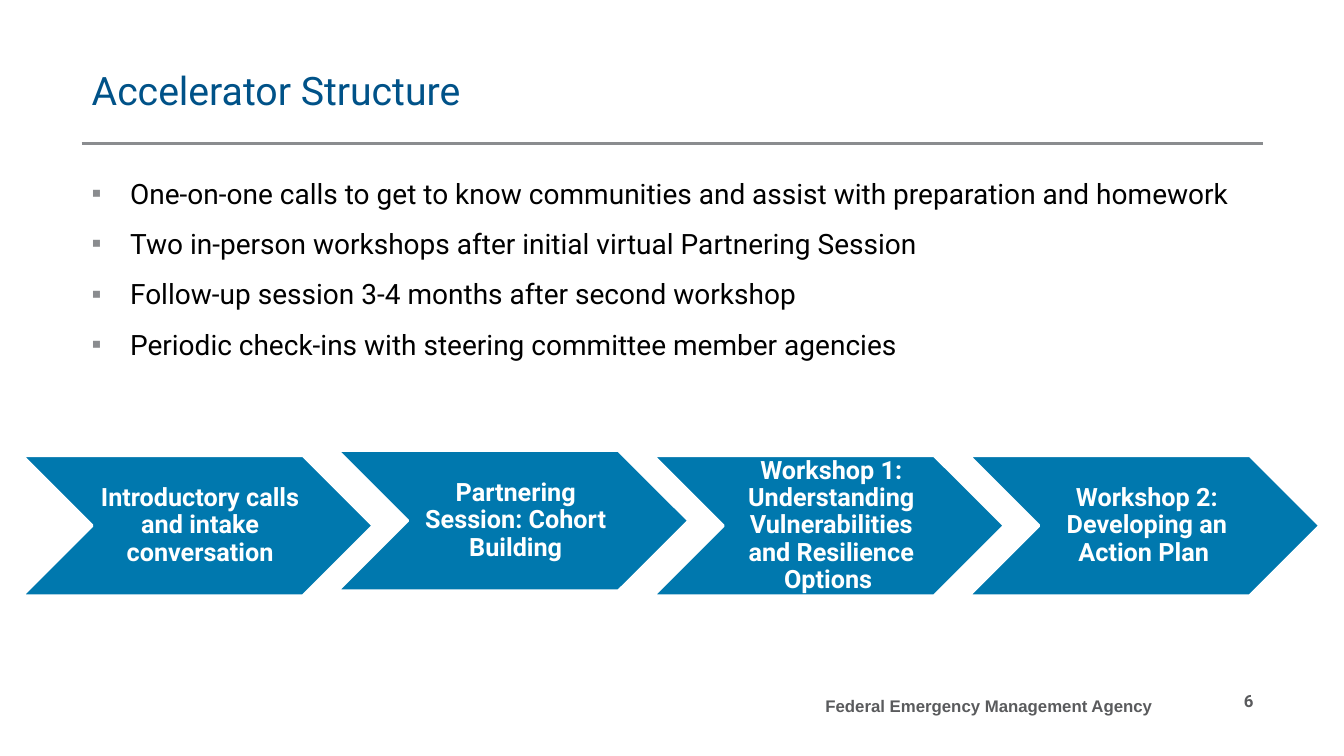
from dataclasses import dataclass

from lxml.etree import SubElement
from pptx import Presentation
from pptx.dml.color import RGBColor
from pptx.enum.shapes import MSO_CONNECTOR, MSO_SHAPE
from pptx.enum.text import MSO_ANCHOR, MSO_AUTO_SIZE, PP_ALIGN
from pptx.oxml.ns import qn
from pptx.util import Inches, Pt


@dataclass(frozen=True)
class Theme:
    heading: RGBColor = RGBColor.from_string("005288")
    body: RGBColor = RGBColor.from_string("000000")
    rule: RGBColor = RGBColor.from_string("8A8C8F")
    footer: RGBColor = RGBColor.from_string("5A5B5D")
    step: RGBColor = RGBColor.from_string("0078AE")
    white: RGBColor = RGBColor.from_string("FFFFFF")
    heading_size: Pt = Pt(28)
    body_size: Pt = Pt(20)
    step_size: Pt = Pt(18)
    footer_size: Pt = Pt(12)
    face: str = "Roboto"
    footer_face: str = "Arial"


THEME = Theme()
LEFT, WIDTH = 0.81, 11.72
STEP_LEFT, STEP_PITCH = 0.22, 3.13

BULLETS = [
    "One-on-one calls to get to know communities and assist with preparation and homework",
    "Two in-person workshops after initial virtual Partnering Session",
    "Follow-up session 3-4 months after second workshop ",
    "Periodic check-ins with steering committee member agencies ",
]
STEPS = [
    ("Introductory calls and intake conversation", 4.52),
    ("Partnering Session: Cohort Building", 4.47),
    ("Workshop 1: Understanding Vulnerabilities and Resilience Options ", 4.52),
    ("Workshop 2: Developing an Action Plan ", 4.52),
]


def place(shape, left, top, width, height):
    shape.left, shape.top = Inches(left), Inches(top)
    shape.width, shape.height = Inches(width), Inches(height)


def style(para, size, color, bold=False, face=THEME.face):
    para.font.size = size
    para.font.name = face
    para.font.bold = bold
    para.font.color.rgb = color


def add_bullet(para):
    properties = para._p.get_or_add_pPr()
    properties.set("marL", str(Inches(0.38)))
    properties.set("indent", str(-Inches(0.38)))
    color = SubElement(properties, qn("a:buClr"))
    SubElement(color, qn("a:srgbClr"), val=str(THEME.rule))
    SubElement(properties, qn("a:buChar"), char="▪")


def fill_title(title, text):
    place(title, LEFT, 0.49, WIDTH, 0.81)
    frame = title.text_frame
    frame.text = text
    frame.auto_size = MSO_AUTO_SIZE.NONE
    frame.vertical_anchor = MSO_ANCHOR.MIDDLE
    para = frame.paragraphs[0]
    para.alignment = PP_ALIGN.LEFT
    style(para, THEME.heading_size, THEME.heading)


def fill_list(body, items):
    place(body, LEFT, 1.67, WIDTH, 2.6)
    frame = body.text_frame
    frame.text = "\n".join(items)
    frame.auto_size = MSO_AUTO_SIZE.NONE
    for index, para in enumerate(frame.paragraphs):
        para.line_spacing = Pt(26)
        para.space_before = Pt(10 if index else 0)
        add_bullet(para)
        style(para, THEME.body_size, THEME.body)


def add_rule(page):
    rule = page.shapes.add_connector(
        MSO_CONNECTOR.STRAIGHT,
        Inches(LEFT), Inches(1.42), Inches(LEFT + WIDTH), Inches(1.42),
    )
    rule.line.color.rgb = THEME.rule
    rule.line.width = Pt(2)
    SubElement(rule._element.spPr, qn("a:effectLst"))


def add_step(page, text, left, top):
    step = page.shapes.add_shape(
        MSO_SHAPE.CHEVRON, Inches(left), Inches(top), Inches(3.48), Inches(1.39)
    )
    step.shadow.inherit = False
    step.fill.solid()
    step.fill.fore_color.rgb = THEME.step
    step.line.color.rgb = THEME.white
    step.line.width = Pt(2)
    frame = step.text_frame
    frame.text = text
    frame.word_wrap = True
    frame.vertical_anchor = MSO_ANCHOR.MIDDLE
    frame.margin_left = Inches(0.08)
    frame.margin_top = frame.margin_right = frame.margin_bottom = Inches(0.03)
    para = frame.paragraphs[0]
    para.alignment = PP_ALIGN.CENTER
    para.line_spacing = 0.9
    style(para, THEME.step_size, THEME.white, bold=True)


def add_footer(page, text, left, width, face, line_spacing):
    box = page.shapes.add_textbox(
        Inches(left), Inches(6.75), Inches(width), Inches(0.4)
    )
    frame = box.text_frame
    frame.text = text
    frame.word_wrap = True
    frame.vertical_anchor = MSO_ANCHOR.MIDDLE
    para = frame.paragraphs[0]
    para.alignment = PP_ALIGN.RIGHT
    para.line_spacing = line_spacing
    style(para, THEME.footer_size, THEME.footer, bold=True, face=face)


def main():
    deck = Presentation()
    deck.slide_width, deck.slide_height = Inches(13.33), Inches(7.5)
    page = deck.slides.add_slide(deck.slide_layouts[1])
    fill_title(page.shapes.title, "Accelerator Structure")
    fill_list(page.placeholders[1], BULLETS)
    add_rule(page)
    for index, (text, top) in enumerate(STEPS):
        add_step(page, text, STEP_LEFT + index * STEP_PITCH, top)
    add_footer(page, "Federal Emergency Management Agency", 6.67, 4.86, THEME.footer_face, 1.5)
    add_footer(page, "6", 11.53, 1, THEME.face, 1.0)
    deck.save("out.pptx")


if __name__ == "__main__":
    main()
